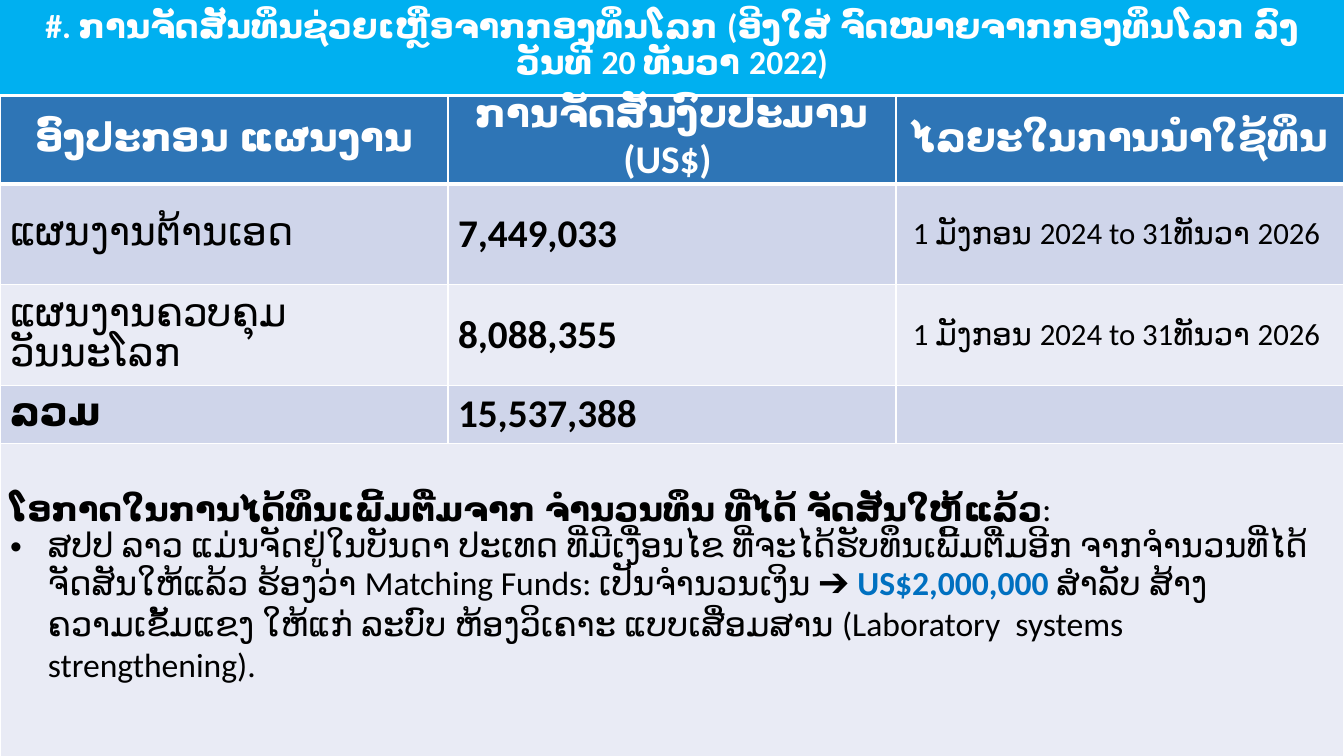
from lxml import etree
from pptx import Presentation
from pptx.dml.color import RGBColor
from pptx.enum.shapes import MSO_SHAPE
from pptx.enum.text import MSO_ANCHOR, PP_ALIGN
from pptx.oxml.ns import qn
from pptx.util import Pt

RECTANGLE = MSO_SHAPE.RECTANGLE
TOP, MIDDLE = MSO_ANCHOR.TOP, MSO_ANCHOR.MIDDLE
LEFT, CENTER = PP_ALIGN.LEFT, PP_ALIGN.CENTER

WIDTH, HEIGHT = 960, 540
SKY, HEADER_BLUE, ACCENT = "00B0F0", "2E75B6", "0070C0"
BAND_DARK, BAND_LIGHT = "CFD5EA", "E9EBF5"
WHITE, BLACK = "FFFFFF", "000000"


def color(value):
    return RGBColor.from_string(value)


class SlideBuilder:
    font = "Calibri"

    def __init__(self, page):
        self.page = page

    def style(self, font, size, ink, bold):
        font.name, font.size, font.bold = self.font, Pt(size), bold
        font.color.rgb = color(ink)

    def set_text(self, para, text, size, ink=BLACK, bold=False, align=LEFT):
        para.text = text
        para.alignment = align
        self.style(para.font, size, ink, bold)

    def add_spans(self, para, size, spans):
        for text, ink, bold in spans:
            span = para.add_run()
            span.text = text
            self.style(span.font, size, ink, bold)

    def bullet(self, para, indent):
        props = para._p.get_or_add_pPr()
        props.set("marL", str(Pt(indent)))
        props.set("indent", str(-Pt(indent)))
        etree.SubElement(props, qn("a:buFont"), typeface="Arial")
        etree.SubElement(props, qn("a:buChar"), char="•")

    def banner(self, text, left, top, width, height):
        box = self.page.shapes.add_shape(
            RECTANGLE, Pt(left), Pt(top), Pt(width), Pt(height))
        box.shadow.inherit = False
        box.fill.solid()
        box.fill.fore_color.rgb = color(SKY)
        box.line.fill.background()
        box.text_frame.word_wrap = True
        box.text_frame.vertical_anchor = MIDDLE
        para = box.text_frame.paragraphs[0]
        self.set_text(para, text, 24, WHITE, True, CENTER)
        para.line_spacing = 0.9

    def table(self, left, top, columns, heights):
        frame = self.page.shapes.add_table(
            len(heights), len(columns), Pt(left), Pt(top),
            Pt(sum(columns)), Pt(sum(heights)))
        grid = frame.table
        grid.horz_banding = False
        for column, width in zip(grid.columns, columns):
            column.width = Pt(width)
        for row, height in zip(grid.rows, heights):
            row.height = Pt(height)
        return grid

    def cell(self, cell, fill, bottom_line=1):
        cell.vertical_anchor = MIDDLE
        props = cell._tc.get_or_add_tcPr()
        for side, weight in (("L", 1), ("R", 1), ("T", 1), ("B", bottom_line)):
            line = etree.SubElement(props, qn(f"a:ln{side}"), w=str(Pt(weight)))
            solid = etree.SubElement(line, qn("a:solidFill"))
            etree.SubElement(solid, qn("a:srgbClr"), val=WHITE)
        cell.fill.solid()
        cell.fill.fore_color.rgb = color(fill)


def main():
    deck = Presentation()
    deck.slide_width, deck.slide_height = Pt(WIDTH), Pt(HEIGHT)
    builder = SlideBuilder(deck.slides.add_slide(deck.slide_layouts[6]))

    # Title banner
    builder.banner(
        "#. ການຈັດສັນທຶນຊ່ວຍເຫຼືອຈາກກອງທຶນໂລກ (ອີງໃສ່ ຈົດໝາຍຈາກກອງທຶນໂລກ "
        "ລົງວັນທີ 20 ທັນວາ 2022)", 0, -1.5, WIDTH, 68.5)

    # Allocation table
    headings = ("ອົງປະກອນ ແຜນງານ", "ການຈັດສັນງົບປະມານ (US$) ", "ໄລຍະໃນການນຳໃຊ້ທຶນ")
    period = "1 ມັງກອນ 2024 to 31ທັນວາ 2026 "
    programmes = (
        ("ແຜນງານຕ້ານເອດ", "7,449,033", period),
        ("ແຜນງານຄວບຄຸມວັນນະໂລກ", "8,088,355", period),
        ("ລວມ", "15,537,388", ""),
    )
    grid = builder.table(0, 69, [WIDTH / 3] * 3, [43, 72, 72, 40, 244])

    for column, heading in enumerate(headings):
        cell = grid.cell(0, column)
        builder.cell(cell, HEADER_BLUE, bottom_line=3)
        cell.margin_top = cell.margin_bottom = 0
        builder.set_text(cell.text_frame.paragraphs[0], heading, 28, WHITE, True, CENTER)

    for row, (name, amount, dates) in enumerate(programmes, 1):
        is_total = row == len(programmes)
        looks = ((name, 28, is_total, LEFT), (amount, 28, True, LEFT),
                 (dates, 22, False, CENTER))
        for column, (text, size, bold, align) in enumerate(looks):
            cell = grid.cell(row, column)
            builder.cell(cell, BAND_DARK if row % 2 else BAND_LIGHT)
            builder.set_text(cell.text_frame.paragraphs[0], text, size, BLACK, bold, align)

    # Merged note on additional funding
    note = grid.cell(4, 0)
    note.merge(grid.cell(4, 2))
    builder.cell(note, BAND_LIGHT)
    note.vertical_anchor = TOP
    note.margin_top = Pt(33)
    frame = note.text_frame
    builder.add_spans(frame.paragraphs[0], 24, (
        ("ໂອກາດໃນການໄດ້ທຶນເພີ້ມຕື່ມຈາກ ຈຳນວນທຶນ ທີ່ໄດ້ ຈັດສັນໃຫ້ແລ້ວ", BLACK, True),
        (":", BLACK, False),
    ))
    detail = frame.add_paragraph()
    builder.bullet(detail, 27)
    builder.add_spans(detail, 24, (
        ("ສປປ ລາວ ແມ່ນຈັດຢູ່ໃນບັນດາ ປະເທດ ທີ່ມີເງື່ອນໄຂ ທີ່ຈະໄດ້ຮັບທຶນເພີ້ມຕື່ມອີກ "
         "ຈາກຈຳນວນທີ່ໄດ້ຈັດສັນໃຫ້ແລ້ວ ຮ້ອງວ່າ Matching Funds: ເປັນຈຳນວນເງິນ ➔ ",
         BLACK, False),
        ("US$2,000,000 ", ACCENT, True),
        ("ສຳລັບ ສ້າງຄວາມເຂັ້ມແຂງ ໃຫ້ແກ່ ລະບົບ ຫ້ອງວິເຄາະ ແບບເສື່ອມສານ "
         "(Laboratory  systems strengthening).", BLACK, False),
    ))

    deck.save("out.pptx")


if __name__ == "__main__":
    main()
